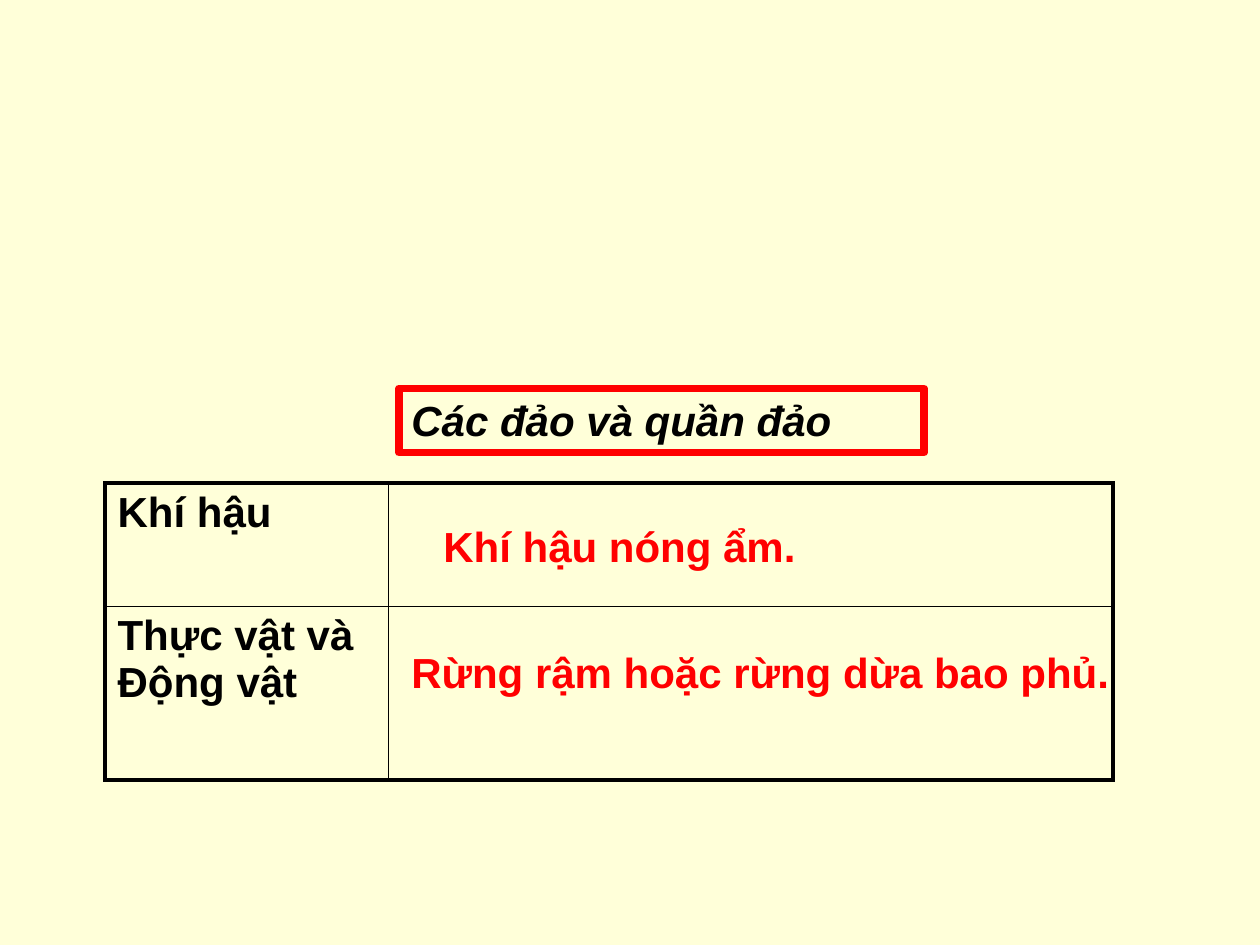
from lxml.etree import SubElement
from pptx import Presentation
from pptx.dml.color import RGBColor
from pptx.enum.shapes import MSO_SHAPE as Shape
from pptx.enum.text import MSO_ANCHOR as Anchor, PP_ALIGN as Align
from pptx.oxml.ns import qn
from pptx.util import Inches, Pt

COLORS = {"background": "FFFFD9", "text": "000000", "accent": "FF0000"}
FONT = "Arial"
UNIT = Inches(10) / 120  # the slide is a grid of 120 columns by 90 rows
OUTER, INNER = 2.25, 1


def color(name):
    return RGBColor.from_string(COLORS[name])


def grid(*counts):
    return [round(count * UNIT) for count in counts]


def write(frame, text, ink="text", italic=False, align=Align.LEFT):
    frame.word_wrap = True
    paragraph = frame.paragraphs[0]
    paragraph.alignment = align
    run = paragraph.add_run()
    run.text = text
    font = run.font
    font.name, font.size, font.bold, font.italic = FONT, Pt(24), True, italic
    font.color.rgb = color(ink)


def add_heading(slide, box, text):
    shape = slide.shapes.add_shape(Shape.RECTANGLE, *grid(*box))
    shape.shadow.inherit = False
    shape.fill.background()
    shape.line.color.rgb = color("accent")
    shape.line.width = Pt(4.5)
    shape.text_frame.vertical_anchor = Anchor.TOP
    write(shape.text_frame, text, italic=True)


def add_answer(slide, box, text, align):
    textbox = slide.shapes.add_textbox(*grid(*box))
    write(textbox.text_frame, text, "accent", align=align)


def set_borders(cell, widths):
    """Draw the left, right, top and bottom edges, in points."""
    properties = cell._tc.get_or_add_tcPr()
    for tag, width in zip(("a:lnL", "a:lnR", "a:lnT", "a:lnB"), widths):
        line = SubElement(properties, qn(tag), w=str(Pt(width)))
        fill = SubElement(line, qn("a:solidFill"))
        SubElement(fill, qn("a:srgbClr"), val=COLORS["text"])


def add_topic_table(slide, left, top, columns, rows, topics):
    frame = slide.shapes.add_table(
        len(rows), len(columns), *grid(left, top, sum(columns), sum(rows)))
    table = frame.table
    table.first_row = table.horz_banding = False
    for column, width in zip(table.columns, grid(*columns)):
        column.width = width
    for row, height in zip(table.rows, grid(*rows)):
        row.height = height
    last_row, last_column = len(rows) - 1, len(columns) - 1
    for i, row in enumerate(table.rows):
        for j, cell in enumerate(row.cells):
            edges = (j == 0, j == last_column, i == 0, i == last_row)
            set_borders(cell, [OUTER if edge else INNER for edge in edges])
            cell.fill.background()
        write(row.cells[0].text_frame, topics[i])


def build_slide(presentation):
    slide = presentation.slides.add_slide(presentation.slide_layouts[6])
    slide.background.fill.solid()
    slide.background.fill.fore_color.rgb = color("background")
    add_topic_table(slide, 10, 46, (27, 69), (11.75, 16.55),
                    ("Khí hậu", "Thực vật và Động vật"))
    add_heading(slide, (38, 37, 50, 6.1), "Các đảo và quần đảo")
    add_answer(slide, (39, 49, 40, 6), "Khí hậu nóng ẩm.", Align.CENTER)
    add_answer(slide, (38, 61, 72, 6), "Rừng rậm hoặc rừng dừa bao phủ.", Align.LEFT)


def main():
    presentation = Presentation()
    presentation.slide_width, presentation.slide_height = grid(120, 90)
    build_slide(presentation)
    presentation.save("out.pptx")


if __name__ == "__main__":
    main()
